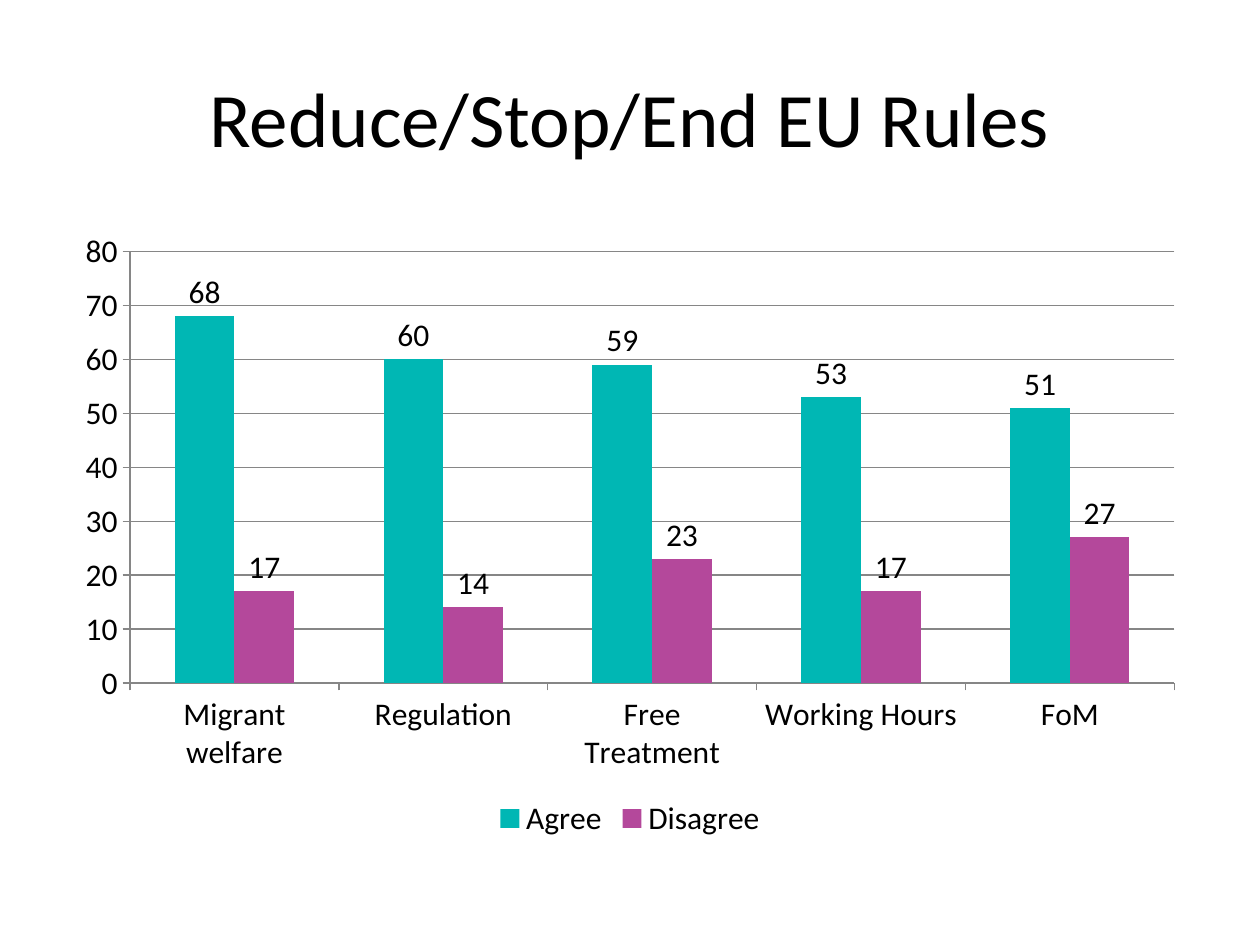
from pptx import Presentation
from pptx.chart.data import CategoryChartData
from pptx.dml.color import RGBColor
from pptx.enum.chart import (XL_CHART_TYPE, XL_LABEL_POSITION,
                             XL_LEGEND_POSITION, XL_TICK_MARK)
from pptx.enum.text import MSO_ANCHOR, PP_ALIGN
from pptx.util import Pt

EMU_PER_PX = 914400 // 126
FONT = "Calibri"
BLACK = RGBColor(0x00, 0x00, 0x00)
GRAY = RGBColor(0x86, 0x86, 0x86)
TEAL = RGBColor(0x00, 0xB7, 0xB4)
PURPLE = RGBColor(0xB4, 0x48, 0x9B)

TOPICS = ["Migrant welfare", "Regulation", "Free Treatment", "Working Hours", "FoM"]
ANSWERS = [
    ("Agree", TEAL, [68, 60, 59, 53, 51]),
    ("Disagree", PURPLE, [17, 14, 23, 17, 27]),
]


def px(length):
    return length * EMU_PER_PX


def format_font(font, size):
    font.name = FONT
    font.size = Pt(size)
    font.color.rgb = BLACK


def set_title(slide, text):
    title = slide.shapes.title
    title.left, title.top, title.width, title.height = map(px, (63, 38, 1134, 158))
    frame = title.text_frame
    frame.text = text
    frame.vertical_anchor = MSO_ANCHOR.MIDDLE
    heading = frame.paragraphs[0]
    heading.alignment = PP_ALIGN.CENTER
    format_font(heading.runs[0].font, 44)


def format_axis(axis):
    axis.major_tick_mark = XL_TICK_MARK.OUTSIDE
    axis.minor_tick_mark = XL_TICK_MARK.NONE
    axis.format.line.color.rgb = GRAY
    axis.format.line.width = Pt(0.75)


def color_series(series, color):
    series.format.fill.solid()
    series.format.fill.fore_color.rgb = color
    series.invert_if_negative = False
    labels = series.data_labels
    labels.show_value = True
    labels.position = XL_LABEL_POSITION.OUTSIDE_END


def add_answer_chart(slide):
    chart_data = CategoryChartData()
    chart_data.categories = TOPICS
    for name, _, values in ANSWERS:
        chart_data.add_series(name, values)
    chart = slide.shapes.add_chart(
        XL_CHART_TYPE.COLUMN_CLUSTERED,
        px(63), px(220), px(1134), px(624), chart_data).chart
    format_font(chart.font, 18)
    chart.has_title = False

    # Axes and gridlines
    topic_axis, percent_axis = chart.category_axis, chart.value_axis
    format_axis(topic_axis)
    format_axis(percent_axis)
    percent_axis.minimum_scale = 0
    percent_axis.maximum_scale = 80
    percent_axis.major_unit = 10
    gridlines = percent_axis.major_gridlines.format.line
    gridlines.color.rgb = GRAY
    gridlines.width = Pt(0.75)

    # Columns
    columns = chart.plots[0]
    columns.gap_width = 150
    columns.overlap = 0
    columns.vary_by_categories = False
    for series, (_, color, _) in zip(columns.series, ANSWERS):
        color_series(series, color)

    # Legend
    chart.has_legend = True
    chart.legend.position = XL_LEGEND_POSITION.BOTTOM
    chart.legend.include_in_layout = False


def main():
    deck = Presentation()
    deck.slide_width, deck.slide_height = px(1260), px(945)
    slide = deck.slides.add_slide(deck.slide_layouts[5])
    set_title(slide, "Reduce/Stop/End EU Rules")
    add_answer_chart(slide)
    deck.save("out.pptx")


if __name__ == "__main__":
    main()
